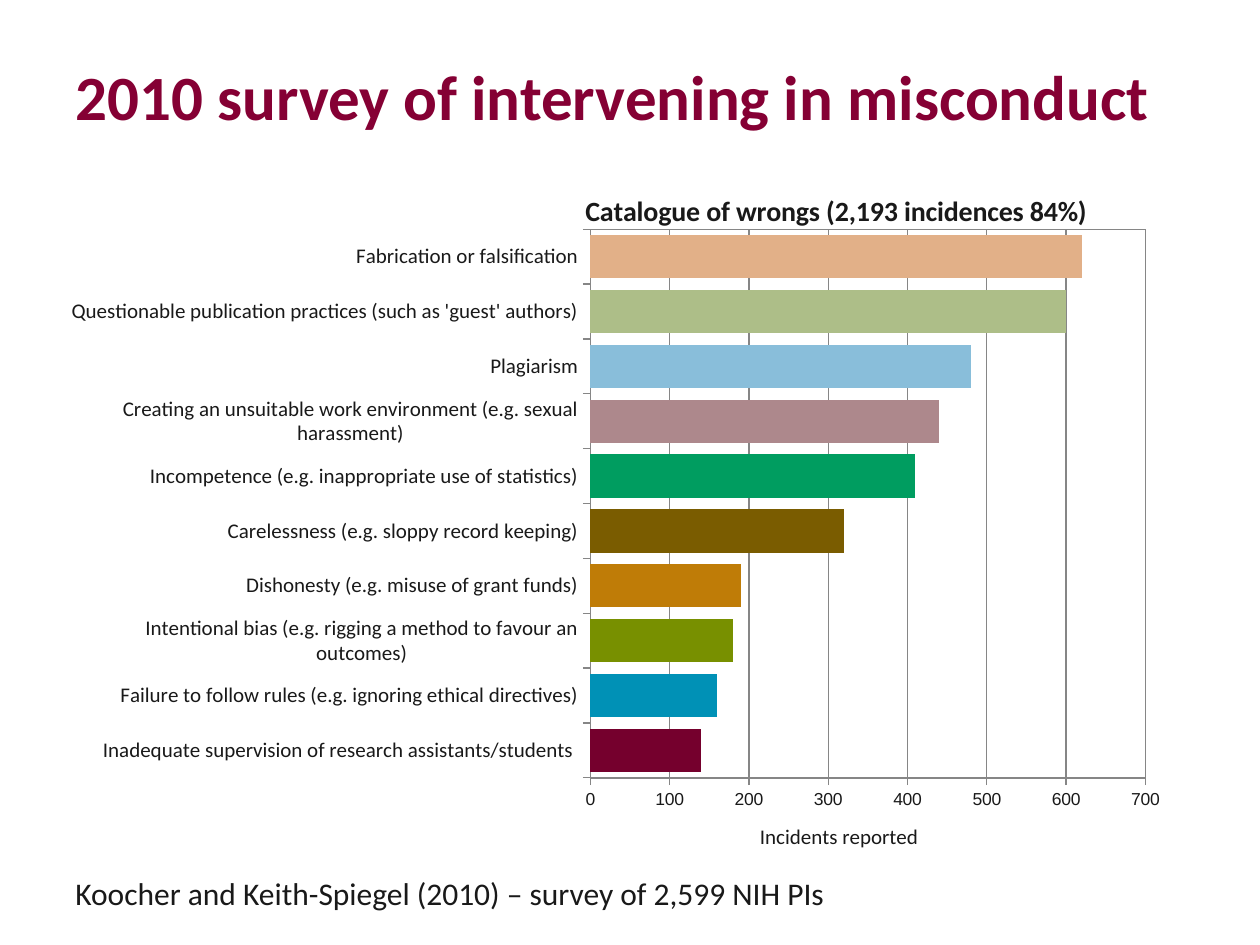
from lxml.etree import SubElement
from pptx import Presentation
from pptx.chart.data import CategoryChartData
from pptx.dml.color import RGBColor
from pptx.enum.chart import XL_CHART_TYPE, XL_TICK_MARK
from pptx.enum.text import MSO_ANCHOR, MSO_AUTO_SIZE, PP_ALIGN
from pptx.oxml import parse_xml
from pptx.oxml.ns import nsdecls, qn
from pptx.util import Pt

COLORS = {"title": "850034", "text": "191919", "line": "868686"}

# Category, incidents reported, bar colour; listed from the bottom bar upwards
INCIDENTS = [
    ("Inadequate supervision of research assistants/students ", 140, "75002D"),
    ("Failure to follow rules (e.g. ignoring ethical directives)", 160, "0091B6"),
    ("Intentional bias (e.g. rigging a method to favour an outcomes)", 180, "789000"),
    ("Dishonesty (e.g. misuse of grant funds)", 190, "BF7C07"),
    ("Carelessness (e.g. sloppy record keeping)", 320, "7A5C00"),
    ("Incompetence (e.g. inappropriate use of statistics)", 410, "009D60"),
    ("Creating an unsuitable work environment (e.g. sexual harassment)", 440, "AD888C"),
    ("Plagiarism", 480, "89BEDA"),
    ("Questionable publication practices (such as 'guest' authors)", 600, "ADBE88"),
    ("Fabrication or falsification", 620, "E2B088"),
]


def rgb(name):
    return RGBColor.from_string(COLORS[name])


def format_font(font, size, color="text", bold=False, name="Calibri"):
    font.size, font.bold, font.name = Pt(size), bold, name
    font.color.rgb = rgb(color)


def write_text(frame, text, **style):
    para = frame.paragraphs[0]
    para.alignment = style.pop("align", None)
    span = para.add_run()
    span.text = text
    format_font(span.font, **style)


def manual_layout(target=None, **position):
    """Return a chart layout that holds the given fractions of the chart's size."""
    layout = parse_xml(f"<c:layout {nsdecls('c')}><c:manualLayout/></c:layout>")
    settings = {"xMode": "edge", "yMode": "edge", **position}
    if target:
        settings = {"layoutTarget": target, **settings}
    for key, value in settings.items():
        SubElement(layout[0], qn(f"c:{key}")).set("val", str(value))
    return layout


def place_chart_title(title, x, y):
    element = title._element
    for old in element.findall(qn("c:layout")):
        element.remove(old)
    element.find(qn("c:tx")).addnext(manual_layout(x=x, y=y))


def place_plot(chart, x, y, w, h):
    """Fix the inner plot area and outline it."""
    plot_area = chart._chartSpace.chart.plotArea
    for old in plot_area.findall(qn("c:layout")):
        plot_area.remove(old)
    plot_area.insert(0, manual_layout("inner", x=x, y=y, w=w, h=h))
    plot_area.append(parse_xml(
        f"<c:spPr {nsdecls('c', 'a')}><a:noFill/><a:ln w=\"3175\"><a:solidFill>"
        f"<a:srgbClr val=\"{COLORS['line']}\"/></a:solidFill></a:ln></c:spPr>"))


def format_axis(axis, size, font_name):
    axis.major_tick_mark = XL_TICK_MARK.OUTSIDE
    axis.minor_tick_mark = XL_TICK_MARK.NONE
    axis.format.line.color.rgb = rgb("line")
    format_font(axis.tick_labels.font, size, name=font_name)


def add_bar_chart(page):
    data = CategoryChartData()
    data.categories = [category for category, _, _ in INCIDENTS]
    data.add_series("Series 1", [count for _, count, _ in INCIDENTS])
    chart = page.shapes.add_chart(XL_CHART_TYPE.BAR_CLUSTERED, Pt(36), Pt(106.75),
                                  Pt(635.75), Pt(382.25), data).chart
    format_font(chart.font, 10)
    chart.has_legend = False

    chart.has_title = True
    write_text(chart.chart_title.text_frame,
               "Catalogue of wrongs (2,193 incidences 84%)", size=16, bold=True)
    place_chart_title(chart.chart_title, 0.465, 0)
    place_plot(chart, 0.474, 0.064, 0.499, 0.826)

    format_axis(chart.category_axis, 12, "Calibri")
    values = chart.value_axis
    format_axis(values, 10, "Arial")
    values.minimum_scale, values.maximum_scale, values.major_unit = 0, 700, 100
    values.has_major_gridlines = True
    values.major_gridlines.format.line.color.rgb = rgb("line")
    write_text(values.axis_title.text_frame, "Incidents reported", size=12)
    place_chart_title(values.axis_title, 0.623, 0.951)

    plot = chart.plots[0]
    plot.gap_width = 27
    plot.vary_by_categories = False
    for index, (_, _, color) in enumerate(INCIDENTS):
        fill = plot.series[0].points[index].format.fill
        fill.solid()
        fill.fore_color.rgb = RGBColor.from_string(color)


def add_title(page, text):
    title = page.shapes.title
    title.left, title.top, title.width, title.height = Pt(36), Pt(21.6), Pt(648), Pt(66.25)
    title.text_frame.vertical_anchor = MSO_ANCHOR.MIDDLE
    write_text(title.text_frame, text, size=36, color="title", bold=True,
               align=PP_ALIGN.LEFT)


def add_source_line(page, text):
    box = page.shapes.add_textbox(Pt(36), Pt(496), Pt(448), Pt(29))
    box.text_frame.word_wrap = False
    box.text_frame.auto_size = MSO_AUTO_SIZE.SHAPE_TO_FIT_TEXT
    write_text(box.text_frame, text, size=18)


def main():
    deck = Presentation()
    deck.slide_width, deck.slide_height = Pt(720), Pt(540)
    page = deck.slides.add_slide(deck.slide_layouts[5])
    add_bar_chart(page)
    add_title(page, "2010 survey of intervening in misconduct")
    add_source_line(page, "Koocher and Keith-Spiegel (2010) – survey of 2,599 NIH PIs")
    deck.save("out.pptx")


if __name__ == "__main__":
    main()
